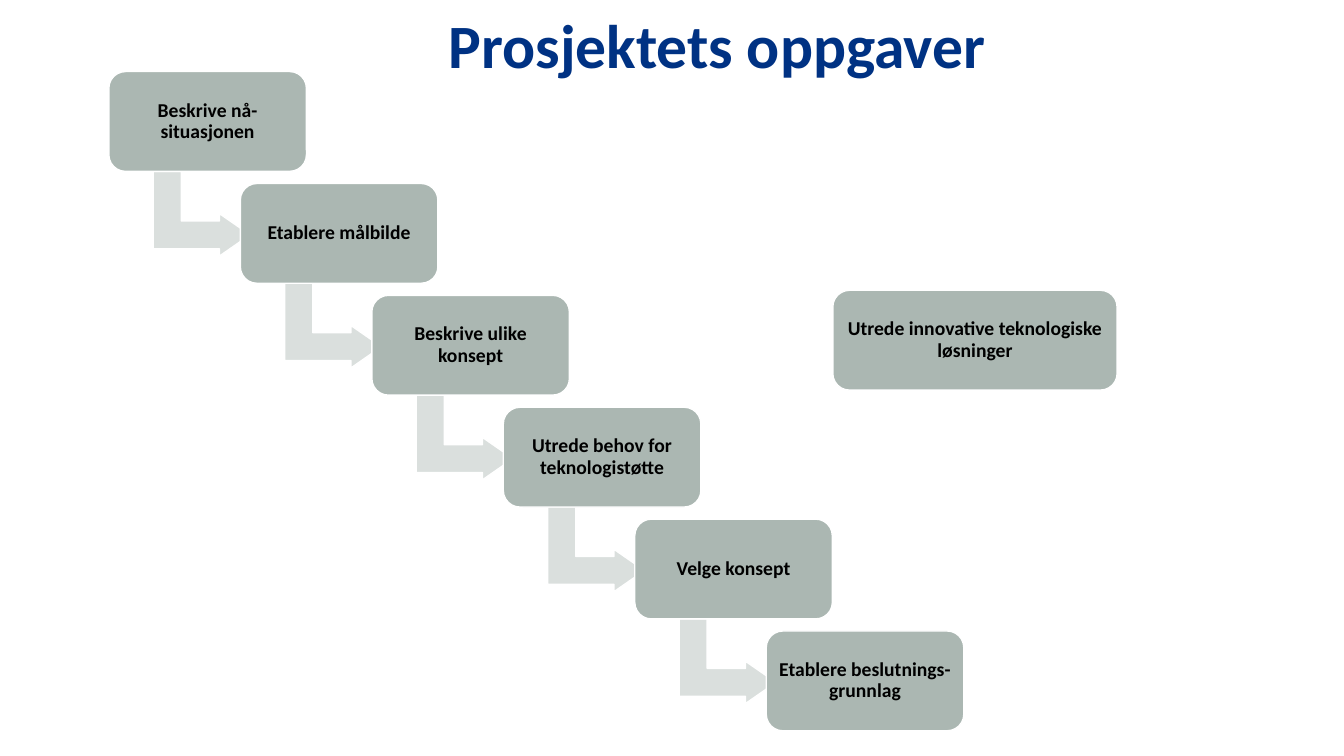
from pptx import Presentation
from pptx.dml.color import RGBColor
from pptx.enum.shapes import MSO_SHAPE
from pptx.enum.text import MSO_ANCHOR, PP_ALIGN
from pptx.util import Inches, Pt

ROUNDED = MSO_SHAPE.ROUNDED_RECTANGLE
BENT_ARROW = MSO_SHAPE.BENT_UP_ARROW
MIDDLE = MSO_ANCHOR.MIDDLE
CENTER = PP_ALIGN.CENTER

FONT = "Calibri"
NAVY, BLACK, WHITE = "003283", "000000", "FFFFFF"
TASK_FILL, ARROW_FILL = "ABB7B2", "DADFDD"
TASK_HEIGHT = 0.99
ARROW_WIDTH, ARROW_HEIGHT = 0.84, 0.96

TASKS = [
    "Beskrive nå-situasjonen",
    "Etablere målbilde",
    "Beskrive ulike konsept",
    "Utrede behov for teknologistøtte",
    "Velge konsept",
    "Etablere beslutnings-grunnlag",
]


def color(hex_code):
    """Turn a hex string into a colour."""
    return RGBColor.from_string(hex_code)


def write(frame, words, size, ink):
    """Write one bold, centred paragraph in a text frame."""
    frame.word_wrap = True
    frame.vertical_anchor = MIDDLE
    paragraph = frame.paragraphs[0]
    paragraph.alignment = CENTER
    paragraph.line_spacing = 0.9
    run = paragraph.add_run()
    run.text = words
    run.font.name = FONT
    run.font.size = Pt(size)
    run.font.bold = True
    run.font.color.rgb = color(ink)


def add_figure(slide, preset, box, fill):
    """Add a filled preset shape with a thin white outline."""
    figure = slide.shapes.add_shape(preset, *map(Inches, box))
    figure.shadow.inherit = False
    figure.fill.solid()
    figure.fill.fore_color.rgb = color(fill)
    figure.line.color.rgb = color(WHITE)
    figure.line.width = Pt(1)
    return figure


def add_title(slide, box, words):
    """Place the slide heading in its box."""
    heading = slide.shapes.add_textbox(*map(Inches, box))
    write(heading.text_frame, words, 44, NAVY)


def add_task(slide, box, words):
    """Place one rounded task card in its box."""
    frame = add_figure(slide, ROUNDED, box, TASK_FILL).text_frame
    frame.margin_left = frame.margin_right = Inches(0.06)
    frame.margin_top = frame.margin_bottom = Inches(0.06)
    write(frame, words, 14, BLACK)


def add_step_arrow(slide, left, top):
    """Place the bent arrow that leads from the task at this corner."""
    box = (left + 0.5, top + 0.93, ARROW_WIDTH, ARROW_HEIGHT)
    arrow = add_figure(slide, BENT_ARROW, box, ARROW_FILL)
    arrow.rotation = 90
    for index, share in enumerate((0.33, 0.25, 0.36)):
        arrow.adjustments[index] = share


def add_staircase(slide, box, tasks):
    """Spread the tasks diagonally over the box, joined by bent arrows."""
    left, top, width, height = box
    task_width = 1.96
    steps = len(tasks) - 1
    step_x = (width - task_width) / steps
    step_y = (height - TASK_HEIGHT) / steps
    for index, words in enumerate(tasks):
        x, y = left + index * step_x, top + index * step_y
        if index < steps:
            add_step_arrow(slide, x, y)
        add_task(slide, (x, y, task_width, TASK_HEIGHT), words)


def main():
    """Build and save the slide."""
    deck = Presentation()
    deck.slide_width, deck.slide_height = Inches(13.33), Inches(7.5)
    slide = deck.slides.add_slide(deck.slide_layouts[6])
    add_title(slide, (3, 0.07, 8.23, 0.83), "Prosjektets oppgaver")
    add_staircase(slide, (1.08, 0.71, 8.48, 6.54), TASKS)
    add_task(slide, (8.26, 2.88, 2.82, TASK_HEIGHT),
             "Utrede innovative teknologiske løsninger")
    deck.save("out.pptx")


if __name__ == "__main__":
    main()
